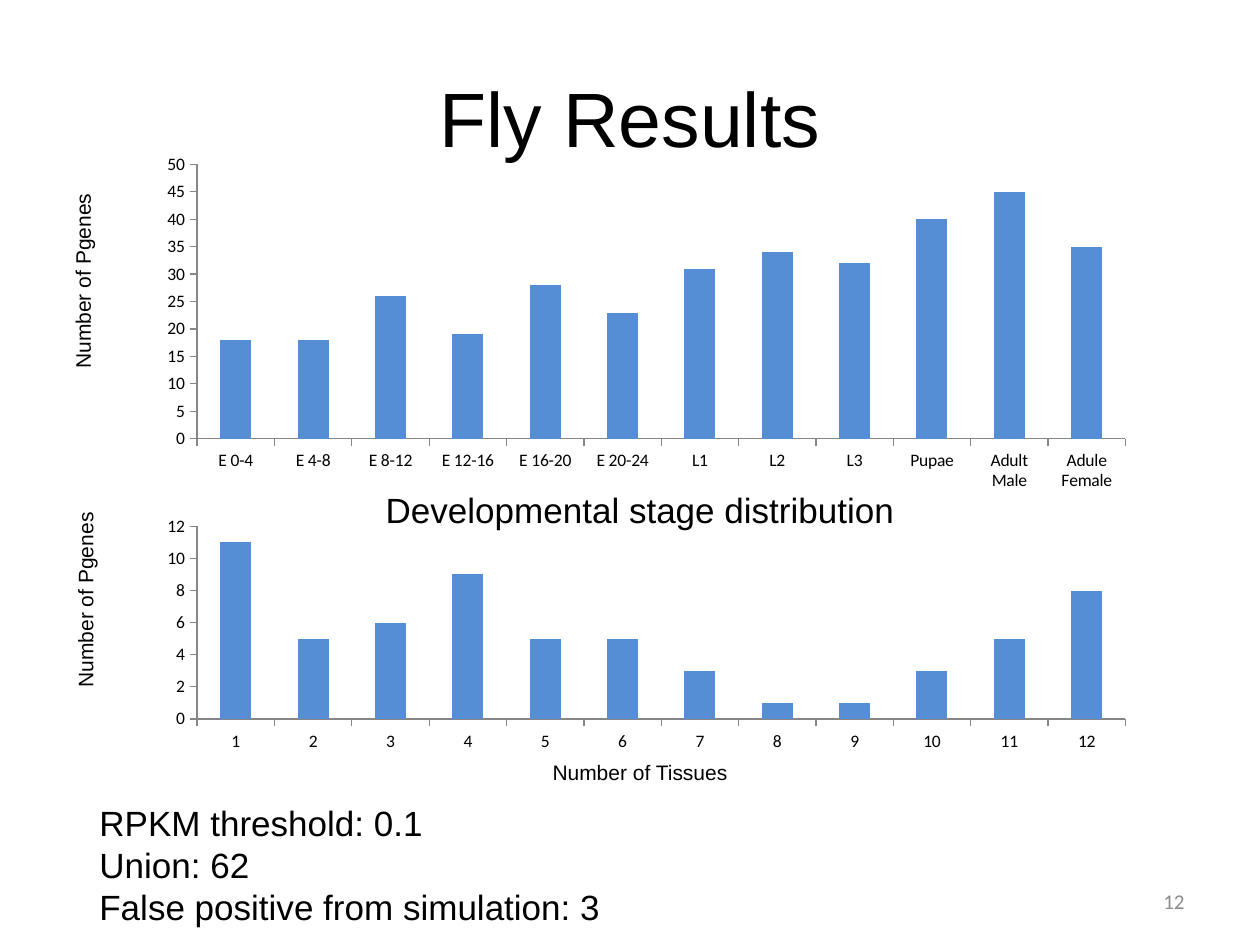
from dataclasses import dataclass

from pptx import Presentation
from pptx.chart.data import CategoryChartData
from pptx.dml.color import RGBColor
from pptx.enum.chart import XL_CHART_TYPE, XL_TICK_MARK
from pptx.enum.text import MSO_ANCHOR, PP_ALIGN
from pptx.slide import Slide
from pptx.util import Inches, Pt

SLIDE_WIDTH, SLIDE_HEIGHT = Inches(10), Inches(7.5)
COLUMNS, ROWS = 100, 75
COLORS = {"text": "000000", "bar": "558ED5", "axis": "868686", "number": "8C8C8C"}


@dataclass(frozen=True)
class Area:
    """A rectangle in columns and rows of the slide grid."""
    column: float
    row: float
    columns: float
    rows: float

    def lengths(self) -> tuple[int, int, int, int]:
        cell_width, cell_height = SLIDE_WIDTH / COLUMNS, SLIDE_HEIGHT / ROWS
        return (round(self.column * cell_width), round(self.row * cell_height),
                round(self.columns * cell_width), round(self.rows * cell_height))


@dataclass(frozen=True)
class Label:
    text: str
    area: Area
    size: float
    alignment: PP_ALIGN = PP_ALIGN.CENTER
    anchor: MSO_ANCHOR = MSO_ANCHOR.MIDDLE
    font: str = "Arial"
    color: str = "text"
    rotation: float = 0
    wrap: bool = True


@dataclass(frozen=True)
class ColumnChart:
    area: Area
    categories: tuple[str, ...]
    values: tuple[int, ...]
    maximum: int
    step: int


def value_axis_label(area: Area) -> Label:
    return Label("Number of Pgenes", area, 12, PP_ALIGN.LEFT, MSO_ANCHOR.TOP,
                 rotation=270, wrap=False)


LABELS = (
    Label("RPKM threshold: 0.1\nUnion: 62\nFalse positive from simulation: 3",
          Area(6.9, 63.1, 88.1, 11.1), 20, PP_ALIGN.LEFT, MSO_ANCHOR.TOP),
    Label("Fly Results", Area(5, 3, 90, 12.5), 44),
    Label("Developmental stage distribution", Area(5.8, 34.2, 90, 12.5), 20),
    Label("Number of Tissues", Area(5.8, 55, 90, 12.5), 12),
    value_axis_label(Area(-1.3, 46, 16.1, 3)),
    value_axis_label(Area(-1.5, 20.7, 16.1, 3)),
    Label("12", Area(71.7, 69.5, 23.3, 4), 12, PP_ALIGN.RIGHT,
          font="Calibri", color="number"),
)

CHARTS = (
    ColumnChart(Area(11.7, 40.6, 79.2, 19.4),
                tuple(str(tissues) for tissues in range(1, 13)),
                (11, 5, 6, 9, 5, 5, 3, 1, 1, 3, 5, 8), 12, 2),
    ColumnChart(Area(11.7, 11.7, 79.2, 27.8),
                ("E 0-4", "E 4-8", "E 8-12", "E 12-16", "E 16-20", "E 20-24",
                 "L1", "L2", "L3", "Pupae", "Adult Male", "Adule Female"),
                (18, 18, 26, 19, 28, 23, 31, 34, 32, 40, 45, 35), 50, 5),
)


def rgb(name: str) -> RGBColor:
    return RGBColor.from_string(COLORS[name])


def draw_label(slide: Slide, label: Label) -> None:
    shape = slide.shapes.add_textbox(*label.area.lengths())
    shape.rotation = label.rotation
    text_frame = shape.text_frame
    text_frame.word_wrap = label.wrap
    text_frame.vertical_anchor = label.anchor
    text_frame.text = label.text
    for paragraph in text_frame.paragraphs:
        paragraph.alignment = label.alignment
        for run in paragraph.runs:
            run.font.name = label.font
            run.font.size = Pt(label.size)
            run.font.color.rgb = rgb(label.color)


def draw_chart(slide: Slide, column_chart: ColumnChart) -> None:
    data = CategoryChartData()
    data.categories = column_chart.categories
    data.add_series("Series 1", column_chart.values)
    chart = slide.shapes.add_chart(XL_CHART_TYPE.COLUMN_CLUSTERED,
                                   *column_chart.area.lengths(), data).chart
    chart.has_legend = False
    chart.has_title = False
    chart.font.name = "Calibri"
    chart.font.size = Pt(10)
    chart.font.color.rgb = rgb("text")

    plot = chart.plots[0]
    plot.vary_by_categories = False
    plot.gap_width = 150
    fill = plot.series[0].format.fill
    fill.solid()
    fill.fore_color.rgb = rgb("bar")

    for axis in (chart.category_axis, chart.value_axis):
        axis.has_major_gridlines = False
        axis.major_tick_mark = XL_TICK_MARK.OUTSIDE
        axis.minor_tick_mark = XL_TICK_MARK.NONE
        axis.format.line.color.rgb = rgb("axis")
        axis.format.line.width = Pt(0.75)
    chart.value_axis.minimum_scale = 0
    chart.value_axis.maximum_scale = column_chart.maximum
    chart.value_axis.major_unit = column_chart.step


def main() -> None:
    presentation = Presentation()
    presentation.slide_width, presentation.slide_height = SLIDE_WIDTH, SLIDE_HEIGHT
    slide = presentation.slides.add_slide(presentation.slide_layouts[6])
    for label in LABELS:
        draw_label(slide, label)
    for column_chart in CHARTS:
        draw_chart(slide, column_chart)
    presentation.save("out.pptx")


if __name__ == "__main__":
    main()
